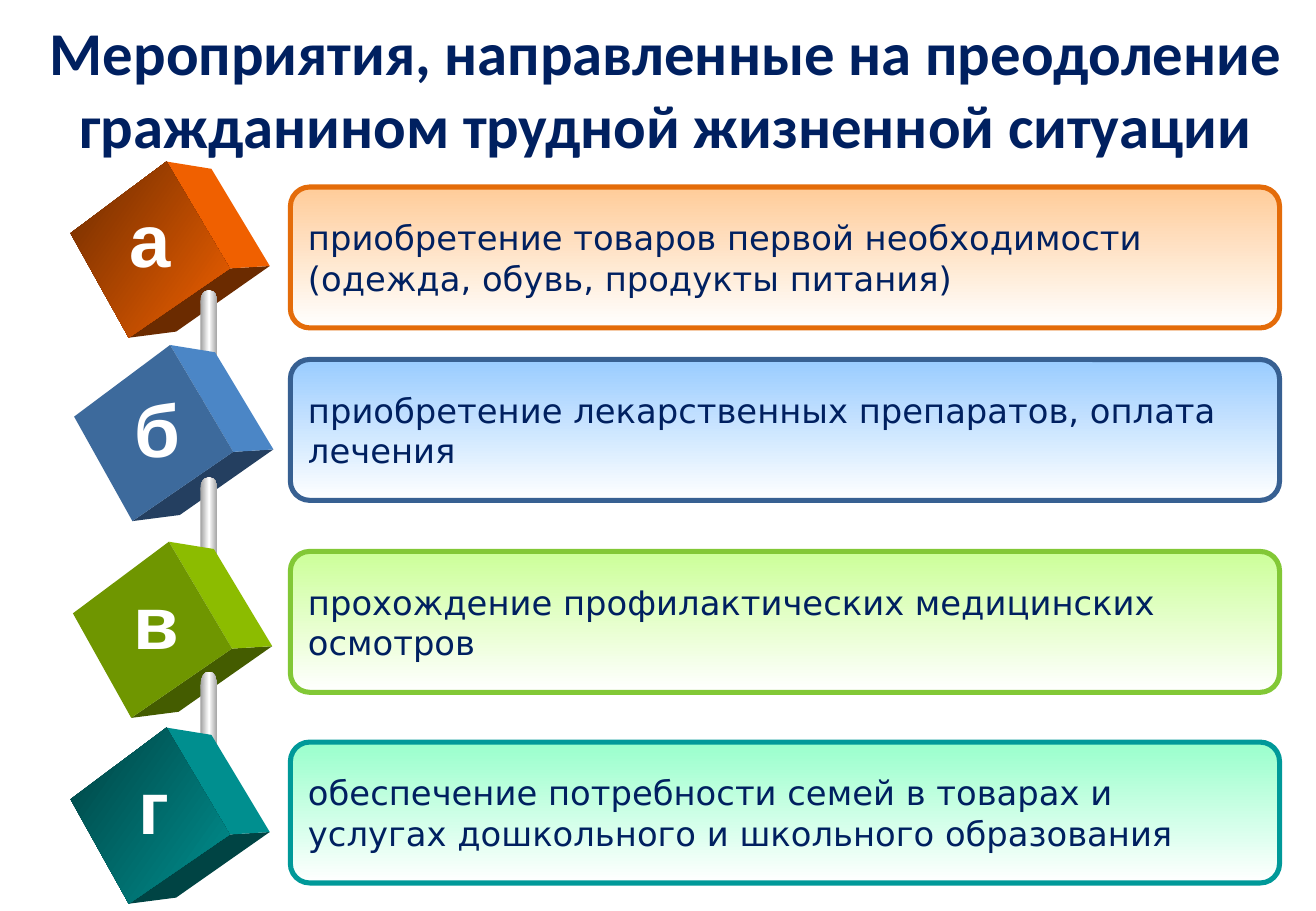
"""Builds the slide on measures that help a citizen out of a difficult life situation."""
from dataclasses import dataclass

from pptx import Presentation
from pptx.dml.color import RGBColor
from pptx.enum.shapes import MSO_SHAPE as Preset
from pptx.enum.text import MSO_ANCHOR as Anchor, PP_ALIGN as Align
from pptx.oxml import parse_xml
from pptx.oxml.ns import nsdecls
from pptx.util import Inches, Pt

Point = tuple[float, float]


@dataclass(frozen=True)
class Theme:
    """Shared colours, fonts and type sizes."""
    ink: str = "002060"
    letter_ink: str = "FFFFFF"
    panel_fade: str = "FFFFFF"
    rod: tuple[str, ...] = ("A0A0A0", "FFFFFF", "A0A0A0")
    title_font: str = "Calibri"
    letter_font: str = "Arial"
    measure_font: str = "DejaVu Sans"
    title_size: int = 36
    letter_size: int = 44
    measure_size: int = 20


@dataclass(frozen=True)
class Measure:
    """One lettered measure with its cube and panel."""
    letter: str
    wording: str
    panel_top: float
    panel_tint: str
    border: str
    cube: Point
    front: tuple[str, ...]
    side: str
    base: str
    letter_at: Point


@dataclass(frozen=True)
class Rod:
    """A metal rod between two cubes: a round cap and a straight body."""
    top: float
    cap_height: float
    body_height: float


THEME = Theme()
FRONT_FACE: list[Point] = [(0, 0.59), (0.79, 0), (1.31, 0.88), (0.48, 1.45)]
SIDE_FACE: list[Point] = [(0.79, 0), (1.16, 0.06), (1.64, 0.86), (1.31, 0.88)]
BASE_FACE: list[Point] = [(0.48, 1.45), (1.31, 0.88), (1.64, 0.86), (0.87, 1.4)]
ROD_LEFT, ROD_WIDTH = 1.65, 0.14
RODS = [Rod(2.39, 0.17, 0.82), Rod(3.93, 0.17, 0.82), Rod(5.53, 0.22, 1.07)]

MEASURES = [
    Measure("а", "приобретение товаров первой необходимости (одежда, обувь, продукты питания)",
            1.54, "FFCC99", "E46C0A", (0.58, 1.33), ("6E2C00", "F06000"),
            "F06000", "6B2B00", (0.96, 1.54)),
    Measure("б", "приобретение лекарственных препаратов, оплата лечения",
            2.96, "99CCFF", "376092", (0.61, 2.84), ("3D6A9C",),
            "4B86C6", "243F60", (1.01, 3.11)),
    Measure("в", "прохождение профилактических медицинских осмотров",
            4.54, "CCFF99", "82C836", (0.6, 4.46), ("6F9600",),
            "8CBC00", "445C00", (1, 4.69)),
    Measure("г", "обеспечение потребности семей в товарах и услугах дошкольного и школьного образования",
            6.11, "99FFCC", "009999", (0.58, 5.99), ("004343", "008F8F"),
            "008F8F", "004444", (0.99, 6.21)),
]


def paint(shape, colors: tuple[str, ...], angle: int = 90) -> None:
    """Fill a shape with one colour or an even linear gradient, without outline or shadow."""
    shape.shadow.inherit = False
    shape.line.fill.background()
    if len(colors) == 1:
        shape.fill.solid()
        shape.fill.fore_color.rgb = RGBColor.from_string(colors[0])
        return
    step = 100000 // (len(colors) - 1)
    stops = "".join(f'<a:gs pos="{i * step}"><a:srgbClr val="{color}"/></a:gs>'
                    for i, color in enumerate(colors))
    shape._element.spPr.insert(2, parse_xml(
        f'<a:gradFill {nsdecls("a")} rotWithShape="1"><a:gsLst>{stops}</a:gsLst>'
        f'<a:lin ang="{angle * 60000}" scaled="0"/></a:gradFill>'))


def write(shape, wording: str, font: str, size: int, color: str,
          align: Align, bold: bool = False, wrap: bool = True) -> None:
    """Put one styled paragraph into a shape."""
    shape.text_frame.word_wrap = wrap
    paragraph = shape.text_frame.paragraphs[0]
    paragraph.text = wording
    paragraph.alignment = align
    paragraph.font.name = font
    paragraph.font.size = Pt(size)
    paragraph.font.bold = bold
    paragraph.font.color.rgb = RGBColor.from_string(color)


def draw_face(slide, corner: Point, outline: list[Point], colors: tuple[str, ...]) -> None:
    """Draw one face of a cube."""
    points = [(Inches(corner[0] + x), Inches(corner[1] + y)) for x, y in outline]
    builder = slide.shapes.build_freeform(*points[0])
    builder.add_line_segments(points[1:], close=True)
    paint(builder.convert_to_shape(), colors, angle=35)


def draw_cube(slide, measure: Measure) -> None:
    """Draw a cube with its letter."""
    draw_face(slide, measure.cube, BASE_FACE, (measure.base,))
    draw_face(slide, measure.cube, SIDE_FACE, (measure.side,))
    draw_face(slide, measure.cube, FRONT_FACE, measure.front)
    left, top = measure.letter_at
    letter = slide.shapes.add_textbox(Inches(left), Inches(top), Inches(0.56), Inches(0.84))
    write(letter, measure.letter, THEME.letter_font, THEME.letter_size,
          THEME.letter_ink, Align.CENTER, bold=True, wrap=False)


def draw_rod(slide, rod: Rod) -> None:
    """Draw a rod that leads to the next cube."""
    parts = [(Preset.OVAL, rod.top, rod.cap_height),
             (Preset.RECTANGLE, rod.top + rod.cap_height / 2, rod.body_height)]
    for preset, top, height in parts:
        part = slide.shapes.add_shape(preset, Inches(ROD_LEFT), Inches(top),
                                      Inches(ROD_WIDTH), Inches(height))
        paint(part, THEME.rod, angle=0)


def draw_panel(slide, measure: Measure) -> None:
    """Draw the rounded panel with the wording of a measure."""
    panel = slide.shapes.add_shape(Preset.ROUNDED_RECTANGLE, Inches(2.39),
                                   Inches(measure.panel_top), Inches(8.14), Inches(1.16))
    panel.adjustments[0] = 0.137
    paint(panel, (measure.panel_tint, THEME.panel_fade))
    panel.line.color.rgb = RGBColor.from_string(measure.border)
    panel.line.width = Pt(3)
    panel.text_frame.vertical_anchor = Anchor.MIDDLE
    write(panel, measure.wording, THEME.measure_font, THEME.measure_size,
          THEME.ink, Align.LEFT)


def main() -> None:
    """Build and save the slide."""
    deck = Presentation()
    deck.slide_width, deck.slide_height = Inches(10.83), Inches(7.5)
    slide = deck.slides.add_slide(deck.slide_layouts[6])
    title = slide.shapes.add_textbox(Inches(0.09), Inches(0.07), Inches(10.78), Inches(1.31))
    write(title, "Мероприятия, направленные на преодоление гражданином трудной жизненной ситуации",
          THEME.title_font, THEME.title_size, THEME.ink, Align.CENTER, bold=True)
    for measure, rod in zip(MEASURES, [*RODS, None]):
        draw_panel(slide, measure)
        draw_cube(slide, measure)
        if rod:
            draw_rod(slide, rod)
    deck.save("out.pptx")


if __name__ == "__main__":
    main()
